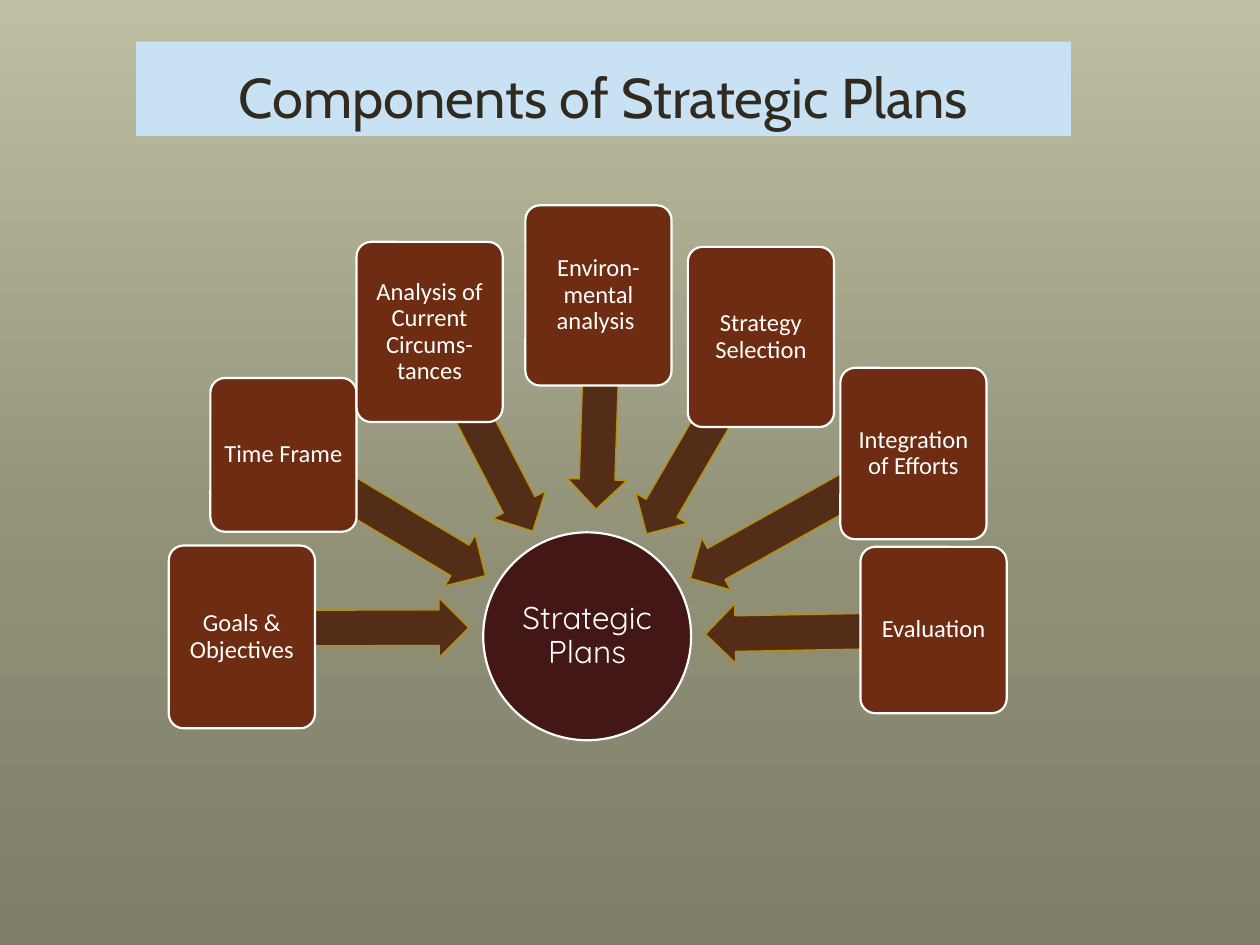
from copy import deepcopy
from math import atan2, cos, degrees, hypot, sin

from pptx import Presentation
from pptx.dml.color import RGBColor
from pptx.enum.shapes import MSO_SHAPE
from pptx.enum.text import MSO_ANCHOR, PP_ALIGN
from pptx.util import Inches, Pt

RECT, OVAL = MSO_SHAPE.RECTANGLE, MSO_SHAPE.OVAL
ROUND, ARROW = MSO_SHAPE.ROUNDED_RECTANGLE, MSO_SHAPE.LEFT_ARROW
MIDDLE, BOTTOM = MSO_ANCHOR.MIDDLE, MSO_ANCHOR.BOTTOM
CENTER = PP_ALIGN.CENTER

WHITE = RGBColor(0xFF, 0xFF, 0xFF)
SKY = RGBColor(0xC8, 0xE1, 0xF3)
INK = RGBColor(0x2F, 0x2B, 0x20)
WINE = RGBColor(0x42, 0x17, 0x16)
RUST = RGBColor(0x6E, 0x2C, 0x12)
BROWN = RGBColor(0x54, 0x2D, 0x18)
GOLD = RGBColor(0xB8, 0x91, 0x01)
BACK = [
    (0, RGBColor(0xBE, 0xBE, 0xA2)),
    (0.62, RGBColor(0x8F, 0x8F, 0x76)),
    (1, RGBColor(0x7E, 0x7E, 0x69)),
]

TITLE = "Components of Strategic Plans"
HUB = "Strategic Plans"
# label, left, top, height of the card, and shift of its arrow (x, y)
CARDS = [
    ("Goals & Objectives", 1.34, 4.33, 1.45, (0, -0.07)),
    ("Time Frame", 1.67, 3.0, 1.22, (0, 0)),
    ("Analysis of Current Circums-tances", 2.83, 1.92, 1.43, (0, 0)),
    ("Environ-mental analysis ", 4.17, 1.63, 1.43, (0.04, -0.07)),
    ("Strategy Selection", 5.46, 1.96, 1.43, (0, 0)),
    ("Integration of Efforts", 6.67, 2.92, 1.36, (0, 0)),
    ("Evaluation", 6.83, 4.34, 1.32, (0, 0)),
]
CARD_W = 1.16
HUB_X, HUB_Y, HUB_D = 4.66, 5.05, 1.65
REACH = 0.94  # from hub centre to arrow tips
THICK = 0.47


def paint(slide):
    """Fill the background with a gradient that runs downwards."""
    fill = slide.background.fill
    fill.gradient()
    fill.gradient_angle = 270
    first = slide.element.xpath(".//a:gs")[0]
    first.addnext(deepcopy(first))
    for stop, (place, color) in zip(fill.gradient_stops, BACK):
        stop.position = place
        stop.color.rgb = color


def draw(slide, kind, box, fill, line=None, width=1.25):
    shape = slide.shapes.add_shape(kind, *map(Inches, box))
    shape.shadow.inherit = False
    shape.fill.solid()
    shape.fill.fore_color.rgb = fill
    if line is None:
        shape.line.fill.background()
    else:
        shape.line.color.rgb = line
        shape.line.width = Pt(width)
    return shape


def write(shape, text, font, size, color, inset, anchor=MIDDLE, space=0.9):
    frame = shape.text_frame
    frame.word_wrap = True
    frame.vertical_anchor = anchor
    frame.margin_left = frame.margin_right = Inches(inset)
    frame.margin_top = frame.margin_bottom = Inches(inset)
    para = frame.paragraphs[0]
    para.alignment = CENTER
    para.line_spacing = space
    run = para.add_run()
    run.text = text
    run.font.name = font
    run.font.size = Pt(size)
    run.font.color.rgb = color


def point(slide, x, y, shift):
    """Draw an arrow from a card's centre towards the hub."""
    dx, dy = HUB_X - x, HUB_Y - y
    turn = atan2(dy, dx)
    size = hypot(dx, dy) - REACH
    mid_x = x + cos(turn) * size / 2 + shift[0]
    mid_y = y + sin(turn) * size / 2 + shift[1]
    box = (mid_x - size / 2, mid_y - THICK / 2, size, THICK)
    arrow = draw(slide, ARROW, box, BROWN, GOLD, 0.75)
    arrow.adjustments[0] = 0.6
    arrow.adjustments[1] = 0.5
    arrow.rotation = degrees(turn) + 180


def main():
    deck = Presentation()
    deck.slide_width, deck.slide_height = Inches(10), Inches(7.5)
    slide = deck.slides.add_slide(deck.slide_layouts[6])
    paint(slide)

    title = draw(slide, RECT, (1.08, 0.33, 7.42, 0.75), SKY)
    write(title, TITLE, "Cabin", 32, INK, 0.05, BOTTOM, 1.0)

    hub_box = (HUB_X - HUB_D / 2, HUB_Y - HUB_D / 2, HUB_D, HUB_D)
    hub = draw(slide, OVAL, hub_box, WINE, WHITE)
    write(hub, HUB, "Quicksand", 18, WHITE, 0.01)

    for label, left, top, high, shift in CARDS:
        point(slide, left + CARD_W / 2, top + high / 2, shift)
        card = draw(slide, ROUND, (left, top, CARD_W, high), RUST, WHITE)
        card.adjustments[0] = 0.1
        write(card, label, "Calibri", 14, WHITE, 0.03)

    deck.save("out.pptx")


if __name__ == "__main__":
    main()
